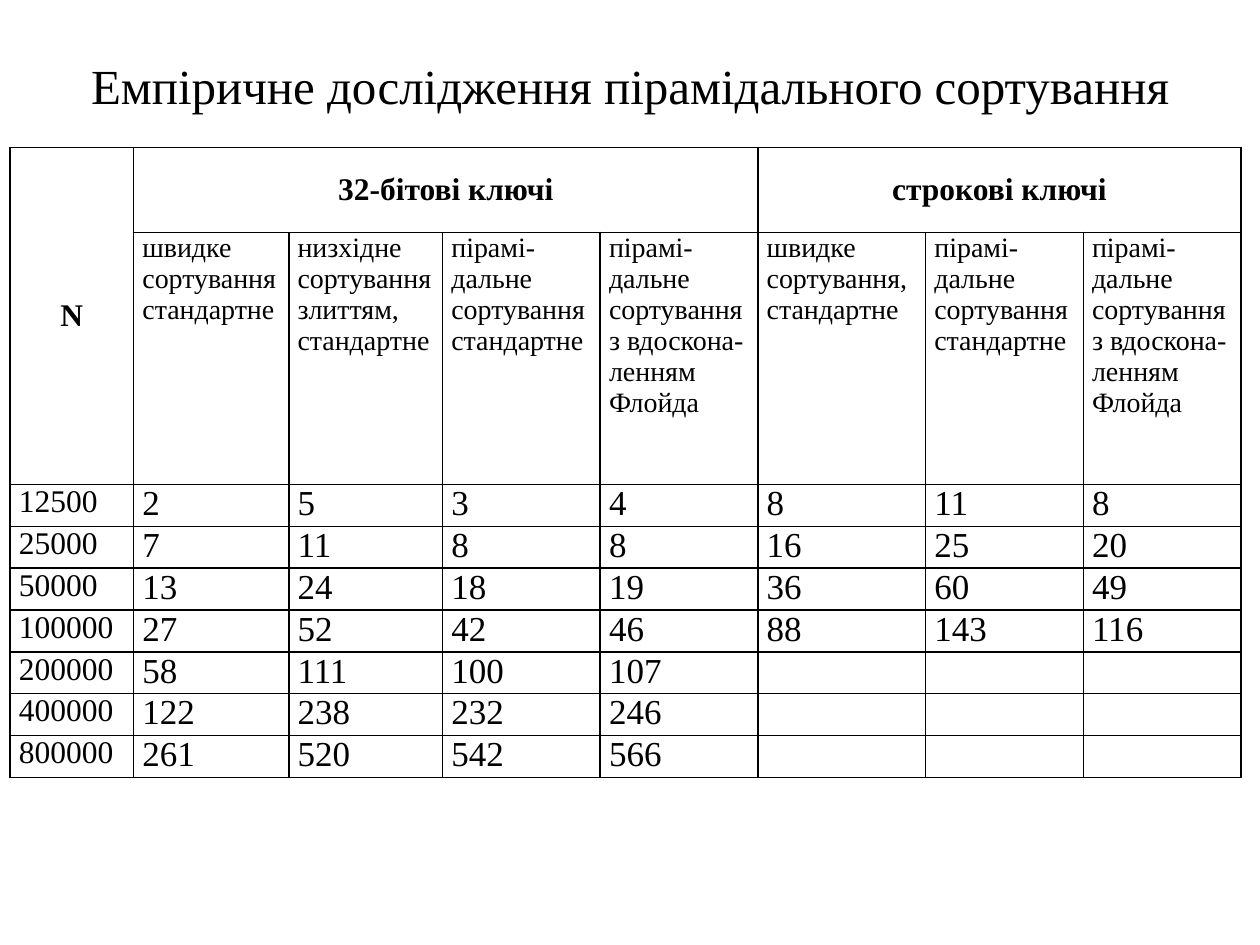
from lxml import etree
from pptx import Presentation, util as u
from pptx.dml.color import RGBColor
from pptx.enum import text
from pptx.oxml.ns import qn

BLACK = RGBColor(0x00, 0x00, 0x00)
WHITE = RGBColor(0xFF, 0xFF, 0xFF)
FONT = "Times New Roman"

COLUMN_WIDTHS = [0.98, 1.23, 1.22, 1.25, 1.25, 1.33, 1.25, 1.25]
ROW_HEIGHTS = [0.67, 1.99] + [0.33] * 7
HEAP = "пірамі-дальне сортування стандартне"
FLOYD = "пірамі-дальне сортування з вдоскона-ленням Флойда"
GROUPS = ["N", "32-бітові ключі", "", "", "", "строкові ключі", "", ""]
METHODS = [
    "",
    "швидке сортування стандартне",
    "низхідне сортування злиттям, стандартне",
    HEAP,
    FLOYD,
    "швидке сортування, стандартне",
    HEAP,
    FLOYD,
]
TIMINGS = [
    [12500, 2, 5, 3, 4, 8, 11, 8],
    [25000, 7, 11, 8, 8, 16, 25, 20],
    [50000, 13, 24, 18, 19, 36, 60, 49],
    [100000, 27, 52, 42, 46, 88, 143, 116],
    [200000, 58, 111, 100, 107, "", "", ""],
    [400000, 122, 238, 232, 246, "", "", ""],
    [800000, 261, 520, 542, 566, "", "", ""],
]
MERGES = [((0, 0), (1, 0)), ((0, 1), (0, 4)), ((0, 5), (0, 7))]


def format_paragraph(paragraph, size, bold=False, centred=False):
    """Give a paragraph its font and alignment."""
    paragraph.font.name = FONT
    paragraph.font.size = u.Pt(size)
    paragraph.font.bold = bold
    paragraph.font.color.rgb = BLACK
    paragraph.alignment = text.PP_ALIGN.CENTER if centred else text.PP_ALIGN.LEFT


def add_borders(cell):
    """Draw a one-point line on each side of a cell."""
    properties = cell._tc.get_or_add_tcPr()
    for index, side in enumerate(("a:lnL", "a:lnR", "a:lnT", "a:lnB")):
        line = etree.Element(qn(side), w=str(u.Pt(1)))
        fill = etree.SubElement(line, qn("a:solidFill"))
        etree.SubElement(fill, qn("a:srgbClr"), val=str(BLACK))
        properties.insert(index, line)


def fill_cell(cell, value, size, heading):
    """Write and format one table cell."""
    cell.text = str(value)
    cell.margin_left = cell.margin_right = u.Inches(0.07)
    cell.margin_top = cell.margin_bottom = 0
    anchors = text.MSO_ANCHOR
    cell.vertical_anchor = anchors.MIDDLE if heading else anchors.TOP
    cell.fill.solid()
    cell.fill.fore_color.rgb = WHITE
    format_paragraph(cell.text_frame.paragraphs[0], size, heading, heading)
    add_borders(cell)


def text_size(row, column):
    """Return the text size in points for a table position."""
    if row == 1:
        return 16
    return 18 if row == 0 or column == 0 else 20


def add_title(slide, left, top, width, height):
    """Place the slide title in the given box."""
    title = slide.shapes.title
    title.left, title.top, title.width, title.height = left, top, width, height
    frame = title.text_frame
    frame.text = "Емпіричне дослідження пірамідального сортування"
    frame.margin_left = frame.margin_right = u.Inches(0.2)
    frame.vertical_anchor = text.MSO_ANCHOR.TOP
    paragraph = frame.paragraphs[0]
    paragraph.space_before = u.Pt(4)
    format_paragraph(paragraph, 28, centred=True)


def add_timings_table(slide, left, top, width, height):
    """Place the table of sorting times in the given box."""
    rows = [GROUPS, METHODS] + TIMINGS
    table = slide.shapes.add_table(
        len(rows), len(COLUMN_WIDTHS), left, top, width, height
    ).table
    table.first_row = table.horz_banding = False
    for column, share in zip(table.columns, COLUMN_WIDTHS):
        column.width = int(width * share / sum(COLUMN_WIDTHS))
    for row, share in zip(table.rows, ROW_HEIGHTS):
        row.height = int(height * share / sum(ROW_HEIGHTS))
    for row, values in enumerate(rows):
        for column, value in enumerate(values):
            size = text_size(row, column)
            fill_cell(table.cell(row, column), value, size, row == 0)
    for first, last in MERGES:
        table.cell(*first).merge(table.cell(*last))


def main():
    """Build the slide and save it."""
    presentation = Presentation()
    presentation.slide_width = u.Inches(10)
    presentation.slide_height = u.Inches(7.5)
    slide = presentation.slides.add_slide(presentation.slide_layouts[5])
    add_title(slide, 0, u.Inches(0.39), u.Inches(10), u.Inches(0.7))
    add_timings_table(
        slide, u.Inches(0.08), u.Inches(1.17), u.Inches(9.77), u.Inches(5)
    )
    presentation.save("out.pptx")


if __name__ == "__main__":
    main()
